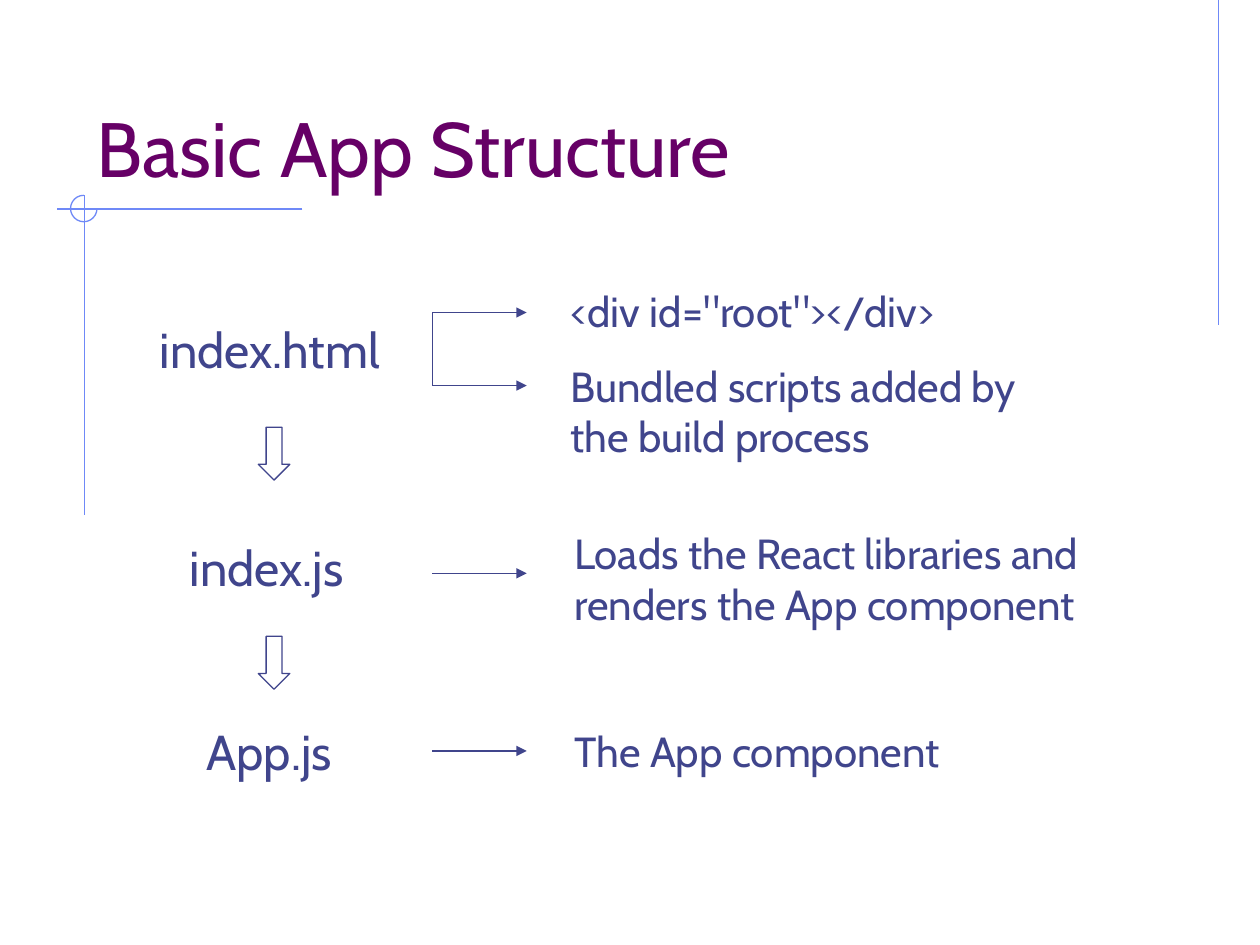
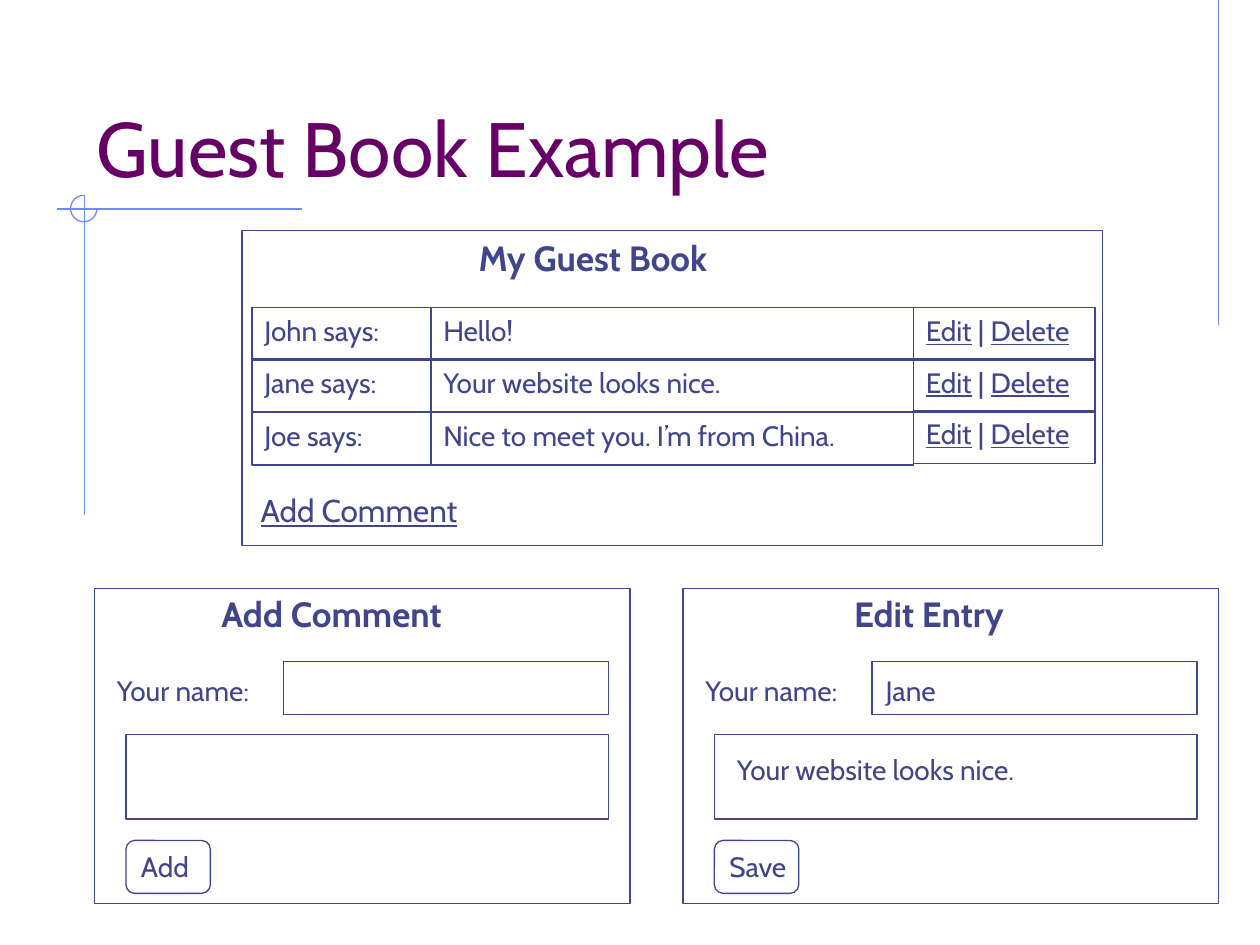
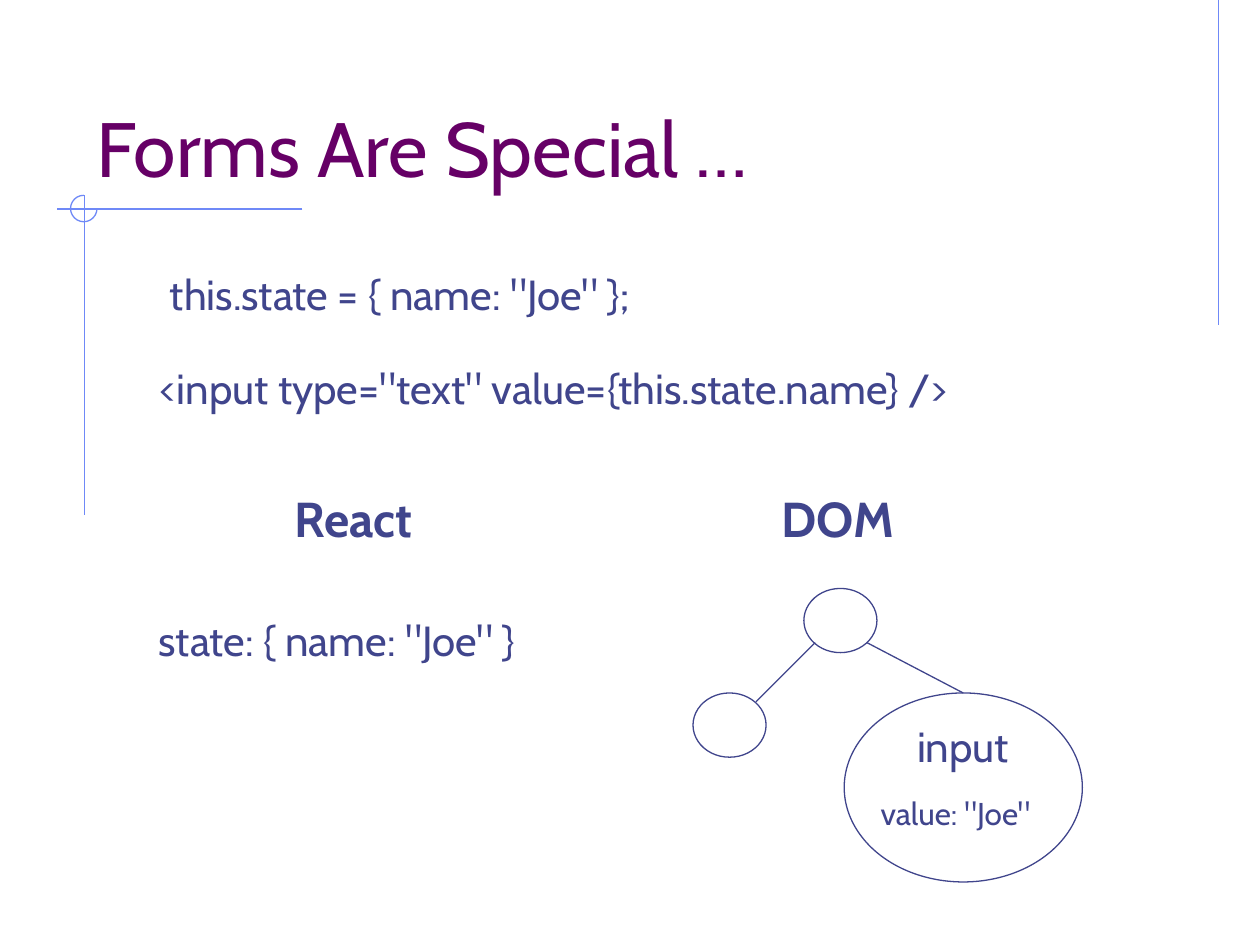
import pptx
import pptx.dml.color
import pptx.enum.shapes
import pptx.enum.text
import pptx.oxml.ns
import pptx.util
import lxml.etree

EMU_PER_PX = 9144  # 100 px to the inch
FONT = "Cabin"
COLORS = {"text": "40458C", "title": "660066", "rule": "6F89F7"}
SHAPE = pptx.enum.shapes.MSO_SHAPE
ANCHOR = pptx.enum.text.MSO_ANCHOR
AUTO_SIZE = pptx.enum.text.MSO_AUTO_SIZE


def px(*lengths):
    return [pptx.util.Emu(n * EMU_PER_PX) for n in lengths]


def rgb(name):
    return pptx.dml.color.RGBColor.from_string(COLORS[name])


class Deck:
    """Holds the presentation, its style and the slide being drawn."""

    def __init__(self):
        self.prs = pptx.Presentation()
        self.prs.slide_width, self.prs.slide_height = px(1000, 750)
        self.slide = None

    def new_slide(self, title):
        self.slide = self.prs.slides.add_slide(self.prs.slide_layouts[6])
        self.line(967, 0, 967, 258, color="rule")
        self.line(240, 166, 45, 166, color="rule")
        self.line(67, 155, 67, 409, color="rule")
        arc = self.shape(SHAPE.ARC, 56, 155, 21, 21, color="rule")
        arc.adjustments[0] = 0
        arc.adjustments[1] = 162  # 270 degrees: right, bottom, left, top
        sp = self.text(title, 67, 33, 850, 125, 44, color="title", wrap=True)
        sp.text_frame.auto_size = AUTO_SIZE.NONE
        sp.text_frame.vertical_anchor = ANCHOR.BOTTOM

    def format_run(self, r, size, color="text", bold=False, underline=False):
        r.font.name = FONT
        r.font.size = pptx.util.Pt(size)
        r.font.color.rgb = rgb(color)
        r.font.bold = bold
        r.font.underline = underline

    def set_text(self, sp, text, size, wrap=False, **style):
        tf = sp.text_frame
        tf.word_wrap = wrap
        tf.vertical_anchor = ANCHOR.TOP
        tf.text = text
        for p in tf.paragraphs:
            p.alignment = pptx.enum.text.PP_ALIGN.LEFT
            for r in p.runs:
                self.format_run(r, size, **style)

    def text(self, text, left, top, width, height, size, **style):
        sp = self.slide.shapes.add_textbox(*px(left, top, width, height))
        self.set_text(sp, text, size, **style)
        sp.text_frame.auto_size = AUTO_SIZE.SHAPE_TO_FIT_TEXT
        return sp

    def shape(self, kind, left, top, width, height, text="", color="text"):
        """Draw an unfilled outline, with small text if any is given."""
        sp = self.slide.shapes.add_shape(kind, *px(left, top, width, height))
        sp.shadow.inherit = False
        sp.fill.background()
        sp.line.color.rgb = rgb(color)
        sp.line.width = pptx.util.Pt(0.75)
        if text:
            self.set_text(sp, text, 16)
        return sp

    def links(self, left, top, width, height, labels):
        """Draw a cell of underlined labels with bars between them."""
        sp = self.shape(SHAPE.RECTANGLE, left, top, width, height, labels[0])
        p = sp.text_frame.paragraphs[0]
        p.runs[0].font.underline = True
        for label in labels[1:]:
            for piece, underline in ((" | ", False), (label, True)):
                r = p.add_run()
                r.text = piece
                self.format_run(r, 16, underline=underline)

    def line(self, x1, y1, x2, y2, color="text", arrow=False):
        cxn = self.slide.shapes.add_connector(
            pptx.enum.shapes.MSO_CONNECTOR.STRAIGHT, *px(x1, y1, x2, y2))
        cxn.line.color.rgb = rgb(color)
        cxn.line.width = pptx.util.Pt(0.75)
        props = cxn.element.spPr
        if arrow:
            lxml.etree.SubElement(props.find(pptx.oxml.ns.qn("a:ln")),
                                  pptx.oxml.ns.qn("a:tailEnd"), type="triangle")
        lxml.etree.SubElement(props, pptx.oxml.ns.qn("a:effectLst"))
        return cxn

    def form(self, left, heading, heading_left, heading_width, button,
             name="", comment=""):
        """Draw a form panel: heading, name field, comment field and button."""
        self.shape(SHAPE.RECTANGLE, left, 467, 425, 250)
        self.text(heading, heading_left, 465, heading_width, 43, 20, bold=True)
        self.text("Your name:", left + 8, 530, 134, 37, 16)
        self.shape(SHAPE.RECTANGLE, left + 150, 525, 258, 42)
        self.shape(SHAPE.RECTANGLE, left + 25, 583, 383, 67)
        self.shape(SHAPE.ROUNDED_RECTANGLE, left + 25, 667, 67, 42, button)
        if name:
            self.text(name, left + 151, 530, 65, 37, 16)
        if comment:
            self.text(comment, left + 33, 592, 350, 37, 16, wrap=True)


def app_structure(deck):
    deck.new_slide("Basic App Structure")
    for name, left, top, width in (("index.html", 117, 249, 202),
                                   ("index.js", 141, 422, 153),
                                   ("App.js", 154, 568, 127)):
        deck.text(name, left, top, width, 57, 28)
    for top in (339, 505):
        deck.shape(SHAPE.DOWN_ARROW, 205, top, 25, 42)

    deck.line(343, 248, 343, 306)
    for arrow_y, note, left, top, width, height in (
            (248, '<div id="root"></div>', 443, 222, 365, 51),
            (306, "Bundled scripts added by\nthe build process",
             443, 281, 394, 91),
            (455, "Loads the React libraries and\nrenders the App component",
             446, 414, 450, 91),
            (596, "The App component", 446, 571, 320, 51)):
        deck.line(343, arrow_y, 418, arrow_y, arrow=True)
        deck.text(note, left, top, width, height, 24)


def guest_book(deck):
    deck.new_slide("Guest Book Example")
    deck.shape(SHAPE.RECTANGLE, 192, 183, 683, 250)
    deck.text("My Guest Book", 370, 183, 228, 43, 20, bold=True)
    entries = (("John says:", "Hello!"),
               ("Jane says:", "Your website looks nice."),
               ("Joe says:", "Nice to meet you. I’m from China."))
    for i, (author, comment) in enumerate(entries):
        top = int(244 + 41.5 * i)
        deck.shape(SHAPE.RECTANGLE, 200, top, 142, 42, author)
        deck.shape(SHAPE.RECTANGLE, 342, top, 383, 42, comment)
        deck.links(725, 244 + 41 * i, 144, 42, ("Edit", "Delete"))
    deck.text("Add Comment", 197, 385, 177, 40, 18, underline=True)

    deck.form(75, "Add Comment", 166, 217, "Add")
    deck.form(542, "Edit Entry", 668, 157, "Save", "Jane",
              "Your website looks nice.")


def special_forms(deck):
    deck.new_slide("Forms Are Special …")
    deck.text('this.state = { name: "Joe" };', 125, 208, 457, 51, 24)
    deck.text('<input type="text" value={this.state.name} />',
              117, 283, 724, 51, 24)
    deck.text("React", 224, 383, 133, 57, 28, bold=True)
    deck.text("DOM", 610, 383, 115, 57, 28, bold=True)
    deck.text('state: { name: "Joe" }', 116, 483, 351, 51, 24)

    for left, top in ((638, 467), (550, 550)):
        deck.shape(SHAPE.OVAL, left, top, 58, 51)
    input_node = deck.shape(SHAPE.OVAL, 670, 550, 189, 150)
    deck.text("input", 718, 567, 95, 51, 24)
    deck.text('value: "Joe"', 689, 625, 153, 40, 18)
    deck.line(647, 510, 600, 557)
    deck.line(688, 510, 765, 550).end_connect(input_node, 0)


def main():
    deck = Deck()
    app_structure(deck)
    guest_book(deck)
    special_forms(deck)
    deck.prs.save("out.pptx")


if __name__ == "__main__":
    main()
